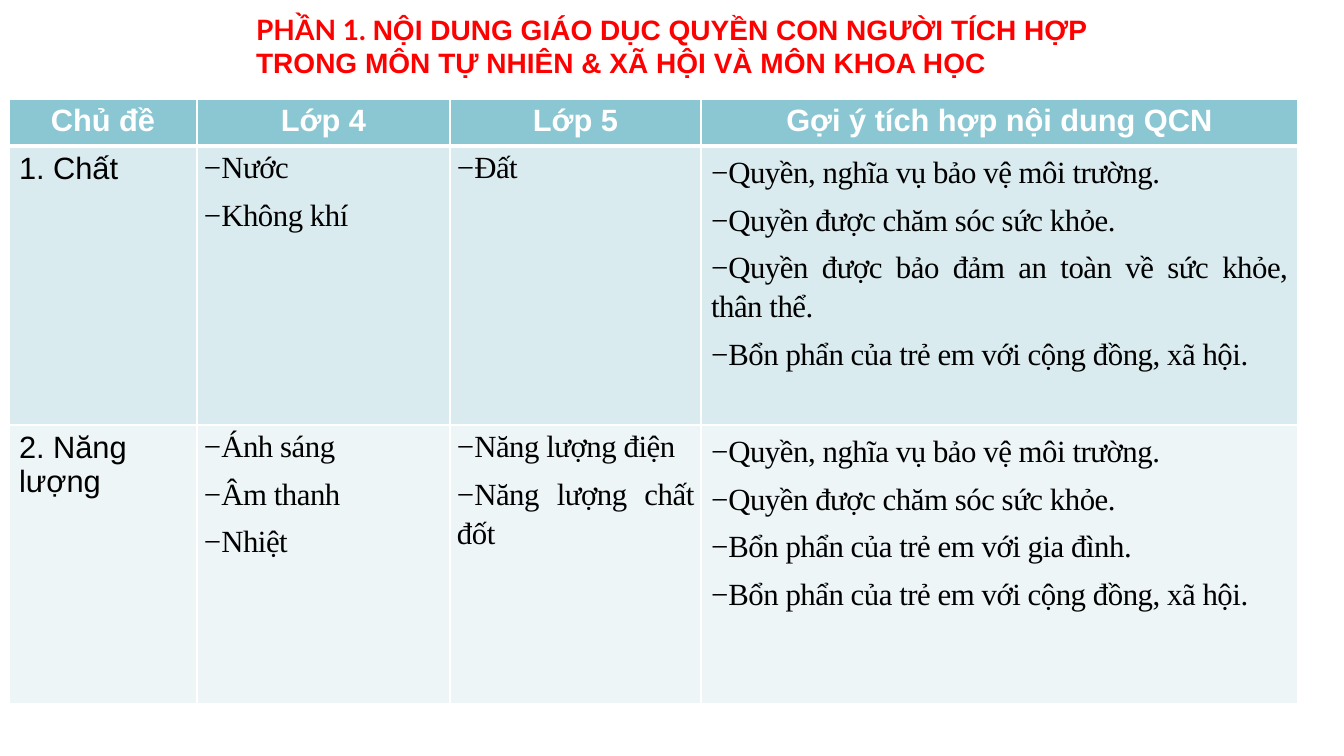
from dataclasses import dataclass
from lxml.etree import SubElement
from pptx import Presentation
from pptx.dml.color import RGBColor
from pptx.enum.text import MSO_ANCHOR, MSO_AUTO_SIZE, PP_ALIGN
from pptx.oxml.ns import qn
from pptx.util import Emu, Pt

SCALE = 914400 / 100.8


@dataclass(frozen=True)
class Theme:
    red: str = "FF0000"
    white: str = "FFFFFF"
    black: str = "000000"
    head: str = "8AC7D3"
    bands: tuple[str, ...] = ("DAEBEF", "EDF5F7")
    title: int = 20
    body: int = 22
    sans: str = "Arial"
    lato: str = "Lato"
    serif: str = "Times New Roman"


@dataclass(frozen=True)
class Topic:
    name: str
    four: tuple[str, ...]
    five: tuple[str, ...]
    rights: tuple[str, ...]


THEME = Theme()
HEADS = ("Chủ đề", "Lớp 4", "Lớp 5", "Gợi ý tích hợp nội dung QCN")
WIDTHS = (188, 253, 251, 597)
HEIGHTS = (47, 279, 279)
GUARD = "Quyền, nghĩa vụ bảo vệ môi trường."
HEALTH = "Quyền được chăm sóc sức khỏe."
SOCIAL = "Bổn phẩn của trẻ em với cộng đồng, xã hội."
TOPICS = (
    Topic("1. Chất", ("Nước", "Không khí"), ("Đất",),
          (GUARD, HEALTH, "Quyền được bảo đảm an toàn về sức khỏe, thân thể.", SOCIAL)),
    Topic("2. Năng lượng", ("Ánh sáng", "Âm thanh", "Nhiệt"),
          ("Năng lượng điện", "Năng lượng chất đốt"),
          (GUARD, HEALTH, "Bổn phẩn của trẻ em với gia đình.", SOCIAL)),
)


def px(count: int) -> Emu:
    return Emu(round(count * SCALE))


def add_run(para, text: str, font: str, size: int, color: str, bold: bool = False):
    run = para.add_run()
    run.text = text
    run.font.name = font
    run.font.size = Pt(size)
    run.font.bold = bold
    run.font.color.rgb = RGBColor.from_string(color)
    return run


def add_title(slide) -> None:
    title = slide.shapes.title
    title.left, title.top, title.width, title.height = px(246), px(7), px(883), px(114)
    frame = title.text_frame
    frame.word_wrap = True
    frame.auto_size = MSO_AUTO_SIZE.SHAPE_TO_FIT_TEXT
    frame.vertical_anchor = MSO_ANCHOR.TOP
    para = frame.paragraphs[0]
    para.alignment = PP_ALIGN.LEFT
    add_run(para, "PHẦN 1. ", THEME.lato, THEME.title, THEME.red, True)
    add_run(para, "NỘI DUNG GIÁO DỤC QUYỀN CON NGƯỜI TÍCH HỢP "
            "TRONG MÔN TỰ NHIÊN & XÃ HỘI VÀ MÔN KHOA HỌC",
            THEME.sans, THEME.title, THEME.red, True)


def style_cell(cell, fill: str, base: int = 1, top: int = 1) -> None:
    props = cell._tc.get_or_add_tcPr()
    for side, width in (("L", 1), ("R", 1), ("T", top), ("B", base)):
        line = SubElement(props, qn(f"a:ln{side}"), w=str(Pt(width)))
        solid = SubElement(line, qn("a:solidFill"))
        SubElement(solid, qn("a:srgbClr"), val=THEME.white)
    cell.fill.solid()
    cell.fill.fore_color.rgb = RGBColor.from_string(fill)


def add_dash(para) -> None:
    props = para._p.get_or_add_pPr()
    props.set("marL", "0")
    props.set("indent", str(-px(38)))
    SubElement(props, qn("a:buFont"), typeface=THEME.serif)
    SubElement(props, qn("a:buChar"), char="−")
    tabs = SubElement(props, qn("a:tabLst"))
    SubElement(tabs, qn("a:tab"), pos=str(px(16)), algn="l")


def add_list(cell, items: tuple[str, ...]) -> None:
    frame = cell.text_frame
    for index, item in enumerate(items):
        para = frame.add_paragraph() if index else frame.paragraphs[0]
        add_dash(para)
        para.alignment = PP_ALIGN.JUSTIFY
        para.line_spacing = 1.15
        para.space_before = Pt(3 if index else 0)
        para.space_after = Pt(3)
        run = add_run(para, item, THEME.serif, THEME.body, THEME.black)
        run.font._element.set("spc", "-30")


def add_grid(slide) -> None:
    table = slide.shapes.add_table(len(HEIGHTS), len(WIDTHS), px(9), px(99),
                                   px(sum(WIDTHS)), px(sum(HEIGHTS))).table
    table.horz_banding = False
    for column, width in zip(table.columns, WIDTHS):
        column.width = px(width)
    for row, height in zip(table.rows, HEIGHTS):
        row.height = px(height)
    for cell, head in zip(table.rows[0].cells, HEADS):
        style_cell(cell, THEME.head, base=3)
        para = cell.text_frame.paragraphs[0]
        para.alignment = PP_ALIGN.CENTER
        add_run(para, head, THEME.sans, THEME.body, THEME.white, True)
    for index, (topic, band) in enumerate(zip(TOPICS, THEME.bands), 1):
        cells = list(table.rows[index].cells)
        for cell in cells:
            style_cell(cell, band, top=3 if index == 1 else 1)
        add_run(cells[0].text_frame.paragraphs[0], topic.name,
                THEME.sans, THEME.body, THEME.black)
        for cell in cells[1:3]:
            cell.margin_left = cell.margin_right = px(7)
            cell.margin_top = cell.margin_bottom = 0
        for cell, items in zip(cells[1:], (topic.four, topic.five, topic.rights)):
            add_list(cell, items)


def main() -> None:
    deck = Presentation()
    deck.slide_width, deck.slide_height = px(1344), px(756)
    slide = deck.slides.add_slide(deck.slide_layouts.get_by_name("Title Only"))
    add_title(slide)
    add_grid(slide)
    deck.save("out.pptx")


if __name__ == "__main__":
    main()
